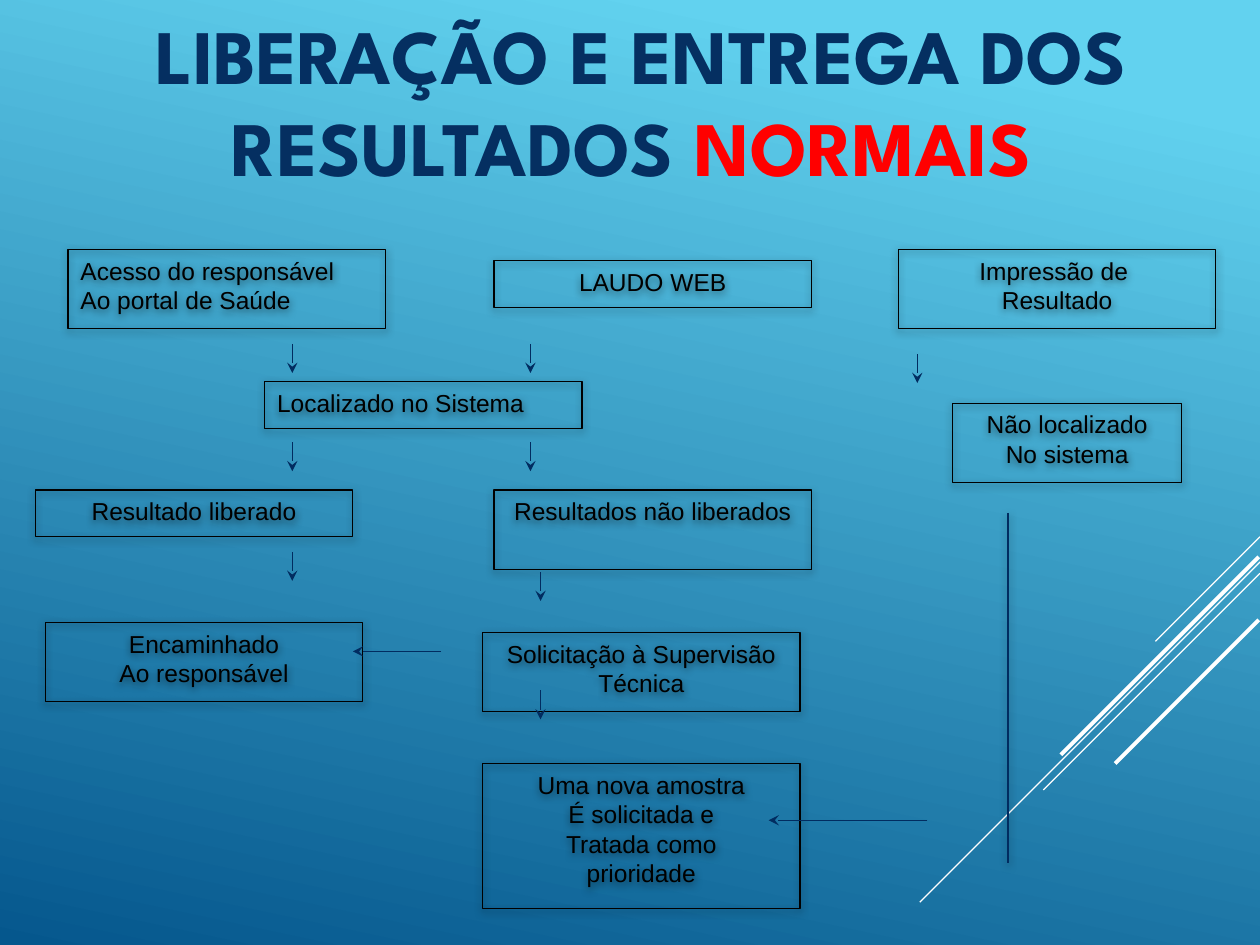
from collections import namedtuple

from lxml import etree
from pptx import Presentation
from pptx.dml.color import RGBColor
from pptx.enum.shapes import MSO_CONNECTOR, MSO_SHAPE
from pptx.enum.text import MSO_ANCHOR, PP_ALIGN
from pptx.oxml import parse_xml
from pptx.oxml.ns import nsdecls, qn
from pptx.util import Inches, Pt

LEFT, CENTER = PP_ALIGN.LEFT, PP_ALIGN.CENTER
TOP, MIDDLE = MSO_ANCHOR.TOP, MSO_ANCHOR.MIDDLE
RECTANGLE, STRAIGHT = MSO_SHAPE.RECTANGLE, MSO_CONNECTOR.STRAIGHT

NAVY, ARROW, RED, BLACK, WHITE = "052F61", "012C60", "FF0000", "000000", "FFFFFF"
SKY, DEEP_BLUE = "62D2EF", "05578D"
SHADOW = (
    f'<a:effectLst {nsdecls("a")}><a:outerShdw blurRad="{Pt(4.5)}" dist="{Pt(1.5)}" '
    'dir="5400000" algn="ctr" rotWithShape="0"><a:srgbClr val="000000">'
    '<a:alpha val="50000"/></a:srgbClr></a:outerShdw></a:effectLst>'
)

Box = namedtuple("Box", "left top width height")

# Flowchart grid, in inches from the corner of its region
STEP_WIDTH, NARROW_WIDTH = 2.52, 1.82
ONE_LINE, TWO_LINES, FOUR_LINES = 0.37, 0.63, 1.15
ARROW_LENGTH = 0.23
LEFT_ARROWS, MIDDLE_ARROWS, LOWER_ARROWS = 2.04, 3.93, 4.01

# (left, top, width, height, alignment, lines)
STEPS = [
    (0.26, 0, STEP_WIDTH, TWO_LINES, LEFT,
     ["Acesso do responsável", "Ao portal de Saúde"]),
    (3.64, 0.09, STEP_WIDTH, ONE_LINE, CENTER, ["LAUDO WEB"]),
    (6.85, 0, STEP_WIDTH, TWO_LINES, CENTER, ["Impressão de ", "Resultado"]),
    (7.28, 1.22, NARROW_WIDTH, TWO_LINES, CENTER, ["Não localizado", "No sistema"]),
    (1.82, 1.05, STEP_WIDTH, ONE_LINE, LEFT, ["Localizado no Sistema"]),
    (0, 1.91, STEP_WIDTH, ONE_LINE, CENTER, ["Resultado liberado"]),
    (3.64, 1.91, STEP_WIDTH, TWO_LINES, CENTER, ["Resultados não liberados"]),
    (3.55, 3.04, STEP_WIDTH, TWO_LINES, CENTER, ["Solicitação à Supervisão Técnica"]),
    (0.08, 2.96, STEP_WIDTH, TWO_LINES, CENTER, ["Encaminhado", "Ao responsável"]),
    (3.55, 4.08, STEP_WIDTH, FOUR_LINES, CENTER,
     ["Uma nova amostra", "É solicitada e", "Tratada como", "prioridade"]),
]
# (x, top)
DOWN_ARROWS = [
    (LEFT_ARROWS, 0.75), (MIDDLE_ARROWS, 0.75),
    (LEFT_ARROWS, 1.53), (MIDDLE_ARROWS, 1.53),
    (LEFT_ARROWS, 2.4), (LOWER_ARROWS, 2.56),
    (LOWER_ARROWS, 3.5), (7, 0.83),
]
# (from x, to x, y)
BACK_ARROWS = [(7.08, 5.82, 4.53), (3.22, 2.52, 3.19)]
# All run at 45 degrees: (right, top, run, line width)
STREAKS = [
    (2.7, 0, 0.83, 0.75), (2.7, 0.2, 2.7, 0.75), (2.7, 0.29, 1.72, 0.75),
    (2.69, 0.16, 1.57, 2.25), (2.69, 0.66, 1.14, 2.25),
]


def color(value):
    return RGBColor.from_string(value)


def add_line(slide, box, start, end, line_color, width=0.75, arrow=False, shadow=False):
    (x1, y1), (x2, y2) = start, end
    line = slide.shapes.add_connector(
        STRAIGHT, Inches(box.left + x1), Inches(box.top + y1),
        Inches(box.left + x2), Inches(box.top + y2))
    line.line.color.rgb = color(line_color)
    line.line.width = Pt(width)
    if arrow:
        etree.SubElement(line.line._get_or_add_ln(), qn("a:tailEnd"), type="stealth")
    properties = line._element.spPr
    if shadow:
        properties.append(parse_xml(SHADOW))
    else:
        etree.SubElement(properties, qn("a:effectLst"))


def add_run(paragraph, text, font, size, text_color, bold=False):
    run = paragraph.add_run()
    run.text = text
    run.font.name = font
    run.font.size = Pt(size)
    run.font.bold = bold
    run.font.color.rgb = color(text_color)


def paint_background(slide):
    fill = slide.background.fill
    fill.gradient()
    fill.gradient_angle = 360 - 102
    for stop, position, shade in zip(fill.gradient_stops, (0.1, 1), (SKY, DEEP_BLUE)):
        stop.position = position
        stop.color.rgb = color(shade)


def add_streaks(slide, box):
    for right, top, run, width in STREAKS:
        add_line(slide, box, (right, top), (right - run, top + run), WHITE, width)


def add_title(slide, box):
    frame = slide.shapes.add_textbox(*map(Inches, box)).text_frame
    frame.word_wrap = True
    frame.vertical_anchor = MIDDLE
    heading = frame.paragraphs[0]
    heading.alignment = CENTER
    for text, shade in (("LIBERAÇÃO E ENTREGA DOS RESULTADOS ", NAVY), ("NORMAIS ", RED)):
        add_run(heading, text, "League Spartan", 44, shade, bold=True)


def add_step(slide, box, alignment, lines):
    step = slide.shapes.add_shape(RECTANGLE, *map(Inches, box))
    step.fill.background()
    step.line.color.rgb = color(BLACK)
    step.line.width = Pt(0.75)
    step._element.spPr.append(parse_xml(SHADOW))
    frame = step.text_frame
    frame.word_wrap = True
    frame.vertical_anchor = TOP
    for index, text in enumerate(lines):
        paragraph = frame.add_paragraph() if index else frame.paragraphs[0]
        paragraph.alignment = alignment
        add_run(paragraph, text, "Arial", 14, BLACK)


def add_flowchart(slide, box):
    for left, top, width, height, alignment, lines in STEPS:
        add_step(slide, Box(box.left + left, box.top + top, width, height), alignment, lines)
    for x, top in DOWN_ARROWS:
        add_line(slide, box, (x, top), (x, top + ARROW_LENGTH), ARROW, arrow=True)
    add_line(slide, box, (7.72, 2.09), (7.72, 4.87), ARROW, shadow=True)
    for start, end, y in BACK_ARROWS:
        add_line(slide, box, (start, y), (end, y), ARROW, arrow=True)


def main():
    deck = Presentation()
    deck.slide_width, deck.slide_height = Inches(10), Inches(7.5)
    slide = deck.slides.add_slide(deck.slide_layouts[6])
    paint_background(slide)
    add_streaks(slide, Box(7.3, 4.26, 2.7, 2.9))
    add_title(slide, Box(0.33, 0, 9.53, 1.58))
    add_flowchart(slide, Box(0.28, 1.98, 9.37, 5.23))
    deck.save("out.pptx")


if __name__ == "__main__":
    main()
